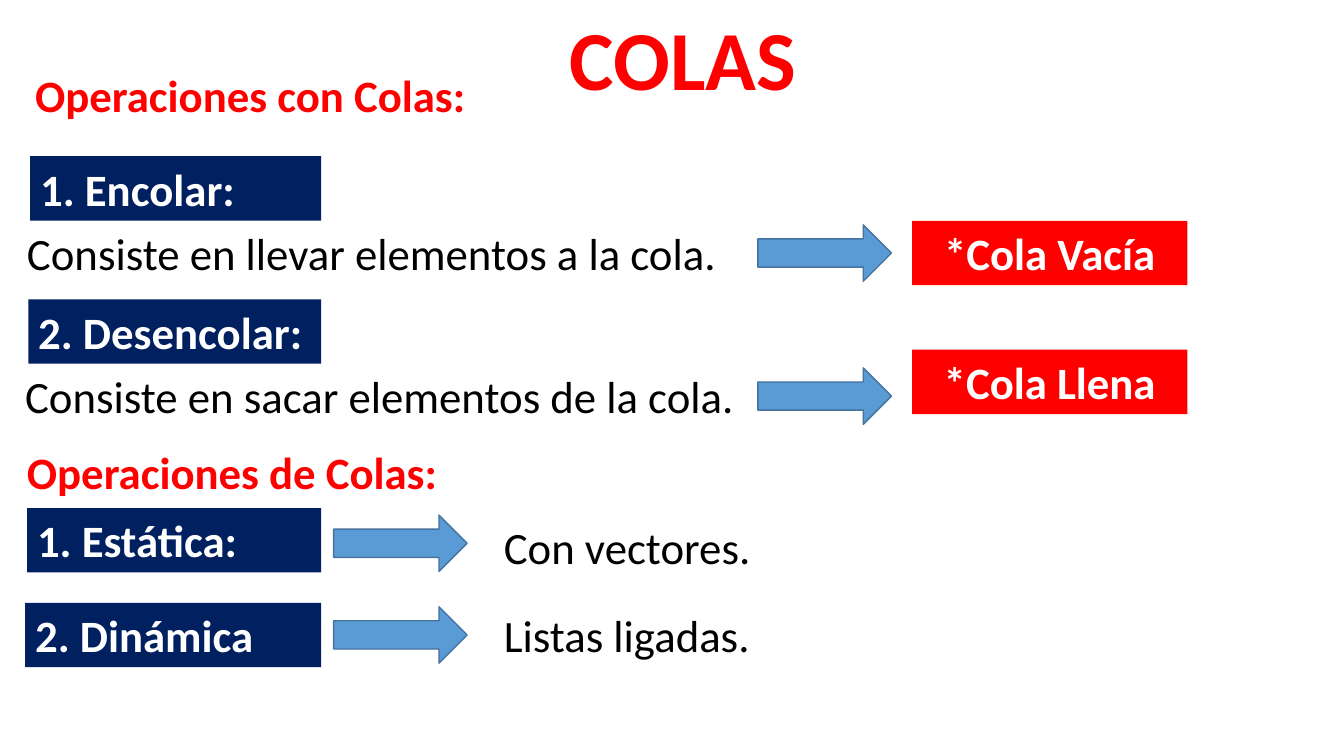
import pptx
import pptx.util
import pptx.dml.color
import pptx.enum.shapes
import pptx.enum.text
from dataclasses import dataclass

Pt = pptx.util.Pt
SHAPES = pptx.enum.shapes.MSO_SHAPE
ALIGN = pptx.enum.text.PP_ALIGN

HEADING = ("COLAS", 383, 0.7, 209.5)
SECTIONS = [
    ("Operaciones con Colas:", 18, 44.6, 450.7),
    ("Operaciones de Colas:", 12.2, 313.9, 450.7),
]
OPERATIONS = [
    ("1. Encolar:", 21.6, 111.6),
    ("2. Desencolar:", 20.2, 213.8),
    ("1. Estática:", 19.4, 362.9),
    ("2. Dinámica", 18, 430.6),
]
DESCRIPTIONS = [
    ("Consiste en llevar elementos a la cola.", 12.2, 157.7, 882),
    ("Consiste en sacar elementos de la cola.", 10.8, 259.9, 882),
    ("Con vectores.", 352.8, 367.9, 289.4),
    ("Listas ligadas.", 352.8, 430.6, 220.3),
]
STATES = [("*Cola Vacía", 157.7), ("*Cola Llena", 249.8)]
ARROWS = [(541.4, 160.6), (541.4, 262.8), (238.3, 367.9), (238.3, 433.4)]

ROW_HEIGHT = 46
HEADING_HEIGHT = 80
OPERATION_RIGHT = 229.4
STATE_LEFT, STATE_WIDTH = 651.6, 196.6
ARROW_WIDTH, ARROW_HEIGHT = 95.4, 40.3


@dataclass(frozen=True)
class Theme:
    font: str = "Calibri"
    heading_size: int = 60
    text_size: int = 32
    red: str = "FF0000"
    navy: str = "002060"
    black: str = "000000"
    white: str = "FFFFFF"
    arrow: str = "5B9BD5"
    arrow_edge: str = "43739E"


THEME = Theme()


def rgb(code):
    return pptx.dml.color.RGBColor.from_string(code)


def place(part, left, top, width, height):
    part.left, part.top = Pt(left), Pt(top)
    part.width, part.height = Pt(width), Pt(height)


def write(part, text, *, color, size=THEME.text_size, bold=False,
          align=ALIGN.LEFT, wrap=True):
    frame = part.text_frame
    frame.text = text
    frame.word_wrap = wrap
    frame.auto_size = pptx.enum.text.MSO_AUTO_SIZE.SHAPE_TO_FIT_TEXT
    frame.vertical_anchor = pptx.enum.text.MSO_ANCHOR.TOP
    paragraph = frame.paragraphs[0]
    paragraph.alignment = align
    paragraph.font.name = THEME.font
    paragraph.font.size = Pt(size)
    paragraph.font.bold = bold
    paragraph.font.color.rgb = rgb(color)


def add_filled(slide, kind, box, fill, edge=None):
    part = slide.shapes.add_shape(kind, *map(Pt, box))
    part.shadow.inherit = False
    part.fill.solid()
    part.fill.fore_color.rgb = rgb(fill)
    if edge:
        part.line.color.rgb = rgb(edge)
        part.line.width = Pt(1)
    else:
        part.line.fill.background()
    return part


def add_label(slide, text, left, top, width, **style):
    label = slide.shapes.add_textbox(*map(Pt, (left, top, width, ROW_HEIGHT)))
    write(label, text, **style)


def add_banner(slide, text, left, top, width, fill, **style):
    banner = add_filled(slide, SHAPES.RECTANGLE, (left, top, width, ROW_HEIGHT), fill)
    write(banner, text, color=THEME.white, bold=True, **style)


def main():
    deck = pptx.Presentation()
    deck.slide_width, deck.slide_height = Pt(960), Pt(540)
    slide = deck.slides.add_slide(deck.slide_layouts.get_by_name("Title Only"))

    text, left, top, width = HEADING
    heading = slide.shapes.title
    place(heading, left, top, width, HEADING_HEIGHT)
    write(heading, text, color=THEME.red, size=THEME.heading_size, bold=True,
          align=ALIGN.CENTER)

    for section in SECTIONS:
        add_label(slide, *section, color=THEME.red, bold=True)
    for description in DESCRIPTIONS:
        add_label(slide, *description, color=THEME.black)
    for text, left, top in OPERATIONS:
        add_banner(slide, text, left, top, OPERATION_RIGHT - left, THEME.navy)
    for text, top in STATES:
        add_banner(slide, text, STATE_LEFT, top, STATE_WIDTH, THEME.red,
                   align=ALIGN.CENTER)
    for left, top in ARROWS:
        add_filled(slide, SHAPES.RIGHT_ARROW, (left, top, ARROW_WIDTH, ARROW_HEIGHT),
                   THEME.arrow, THEME.arrow_edge)

    deck.save("out.pptx")


if __name__ == "__main__":
    main()
